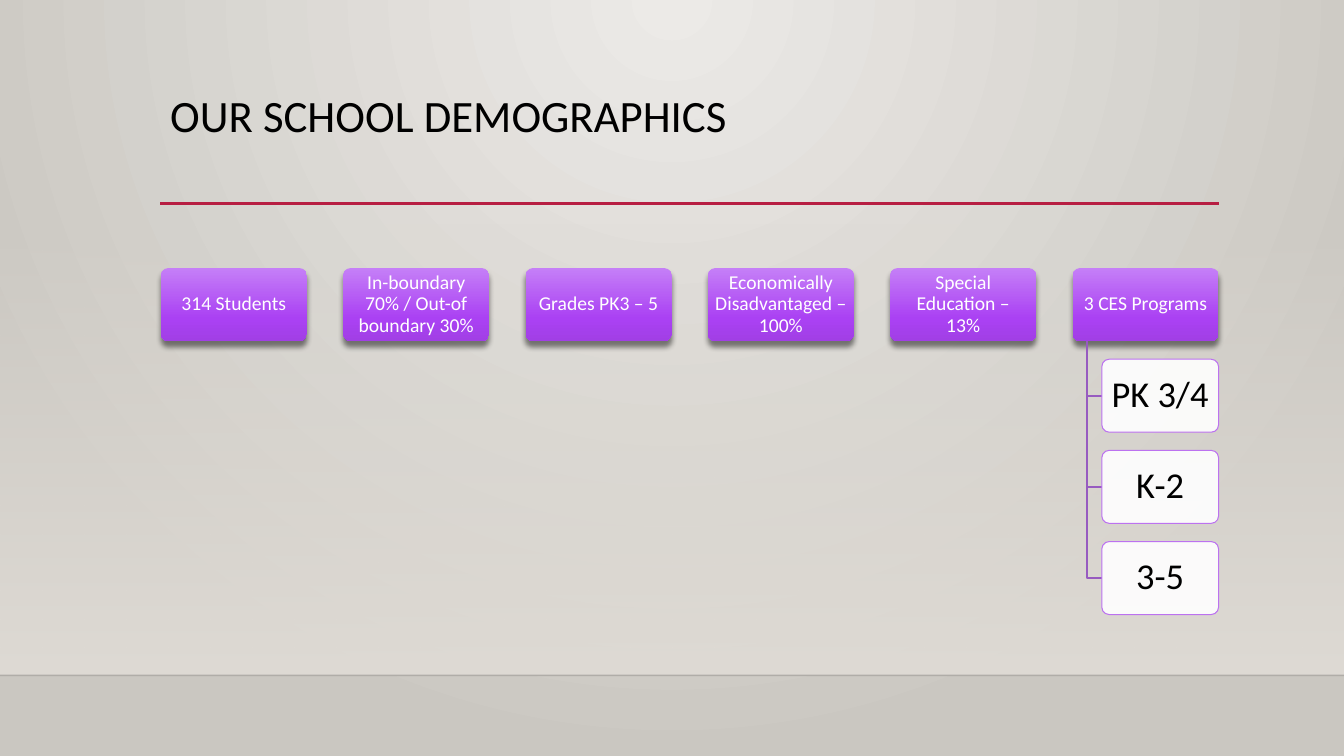
from lxml import etree
from pptx import Presentation
from pptx.dml.color import RGBColor
from pptx.enum.shapes import MSO_CONNECTOR, MSO_SHAPE
from pptx.enum.text import MSO_ANCHOR, PP_ALIGN
from pptx.oxml.ns import qn
from pptx.util import Pt

STRAIGHT = MSO_CONNECTOR.STRAIGHT
RECTANGLE, ROUNDED = MSO_SHAPE.RECTANGLE, MSO_SHAPE.ROUNDED_RECTANGLE
TOP, MIDDLE = MSO_ANCHOR.TOP, MSO_ANCHOR.MIDDLE
LEFT, CENTER = PP_ALIGN.LEFT, PP_ALIGN.CENTER

WIDTH, HEIGHT = 960, 540
FONT = "Calibri"
COLORS = {
    "glow": "ECEAE7", "edge": "CAC7C1", "haze": "DFDBD5", "black": "000000",
    "white": "FFFFFF", "rule": "B71E42", "card_light": "C57FF7",
    "card": "AA41F3", "card_dark": "A13FE5", "branch": "975BC0",
    "program_line": "BC72F0",
}
FACTS = [
    "314 Students", "In-boundary 70% / Out-of boundary 30%", "Grades PK3 – 5",
    "Economically Disadvantaged – 100%", "Special Education – 13%",
    "3 CES Programs",
]
PROGRAMS = ["PK 3/4", "K-2", "3-5"]


def color(name):
    """Return the named colour."""
    return RGBColor.from_string(COLORS[name])


def add_node(parent, tag, **attributes):
    """Append a drawing element with the given attributes."""
    node = etree.SubElement(parent, qn(tag))
    for name, value in attributes.items():
        node.set(name, str(value))
    return node


def set_alpha(color_node, percent):
    """Make a colour element partly opaque."""
    add_node(color_node, "a:alpha", val=percent * 1000)


def set_gradient(root, stops, circle=None):
    """Fill with (position, colour, opacity) stops, downward or from a focus."""
    gradient = root.find(".//" + qn("a:gradFill"))
    for child in list(gradient):
        gradient.remove(child)
    stop_list = add_node(gradient, "a:gsLst")
    for position, name, opacity in stops:
        stop = add_node(stop_list, "a:gs", pos=position * 1000)
        set_alpha(add_node(stop, "a:srgbClr", val=COLORS[name]), opacity)
    if circle:
        focus = add_node(gradient, "a:path", path="circle")
        add_node(focus, "a:fillToRect", **circle)
    else:
        add_node(gradient, "a:lin", ang=5400000, scaled=0)


def set_text(box, text, size, name, align=CENTER, anchor=MIDDLE, inset=(5, 3.6)):
    """Write one formatted paragraph into a box."""
    frame = box.text_frame
    frame.word_wrap = True
    frame.vertical_anchor = anchor
    frame.margin_left = frame.margin_right = Pt(inset[0])
    frame.margin_top = frame.margin_bottom = Pt(inset[1])
    para = frame.paragraphs[0]
    para.alignment = align
    para.line_spacing = 0.9
    span = para.add_run()
    span.text = text
    span.font.name = FONT
    span.font.size = Pt(size)
    span.font.color.rgb = color(name)


def add_box(page, kind, left, top, width, height):
    """Add a preset shape without shadow or outline."""
    box = page.shapes.add_shape(kind, Pt(left), Pt(top), Pt(width), Pt(height))
    box.line.fill.background()
    box.shadow.inherit = False
    if kind == ROUNDED:
        box.adjustments[0] = 0.1
    return box


def add_rule(page, left, right, top, name, weight, opacity=100):
    """Draw a horizontal line."""
    rule = page.shapes.add_connector(STRAIGHT, Pt(left), Pt(top), Pt(right), Pt(top))
    rule.line.color.rgb = color(name)
    rule.line.width = Pt(weight)
    properties = rule.element.spPr
    set_alpha(properties.find(".//" + qn("a:srgbClr")), opacity)
    add_node(properties, "a:effectLst")


def add_backdrop(page, width, height):
    """Paint the background, the haze band and the floor line."""
    page.background.fill.gradient()
    set_gradient(page.element, [(0, "glow", 100), (100, "edge", 100)],
                 circle={"l": 43000, "t": 0, "r": 43000, "b": 100000})
    floor = height - 57.6
    haze = add_box(page, RECTANGLE, 0, 159, width, floor - 159)
    haze.fill.gradient()
    set_gradient(haze.element, [(0, "haze", 0), (100, "haze", 100)])
    add_rule(page, 0, width, floor, "black", 1, opacity=20)


def add_heading(page, text, left, top, width, height):
    """Add the title with the red rule near its foot."""
    add_rule(page, left, left + width, top + height, "rule", 2.5)
    title = page.shapes.add_textbox(Pt(left), Pt(top), Pt(width), Pt(height))
    set_text(title, text, 32, "black", align=LEFT, anchor=TOP, inset=(7.2, 3.6))


def add_card(page, text, left, top, width, height):
    """Add a purple card with a soft shadow."""
    card = add_box(page, ROUNDED, left, top, width, height)
    card.fill.gradient()
    set_gradient(card.element, [(0, "card_light", 100), (69, "card", 100),
                                (100, "card_dark", 100)])
    effects = card.element.spPr.find(qn("a:effectLst"))
    shadow = add_node(effects, "a:outerShdw", blurRad=Pt(4), dist=Pt(4),
                      dir=5400000, rotWithShape=0)
    set_alpha(add_node(shadow, "a:srgbClr", val=COLORS["black"]), 48)
    set_text(card, text, 14, "white", inset=(3.6, 3))


def add_branch(page, trunk, start, end, level):
    """Draw an elbow from a card's foot to a program's side."""
    builder = page.shapes.build_freeform(Pt(trunk), Pt(start))
    builder.add_line_segments([(Pt(trunk), Pt(level)), (Pt(end), Pt(level))],
                              close=False)
    branch = builder.convert_to_shape()
    branch.fill.background()
    branch.line.color.rgb = color("branch")
    branch.line.width = Pt(1.25)
    branch.shadow.inherit = False


def add_programs(page, names, left, top, width, height):
    """Hang the programs below the card that has the given box."""
    child_left, child_width = left + 0.2 * width, 0.8 * width
    for index, name in enumerate(names, start=1):
        child_top = top + 1.25 * height * index
        add_branch(page, left + 0.1 * width, top + height, child_left,
                   child_top + height / 2)
        child = add_box(page, ROUNDED, child_left, child_top, child_width, height)
        child.fill.solid()
        child.fill.fore_color.rgb = color("white")
        set_alpha(child.element.spPr.find(".//" + qn("a:srgbClr")), 90)
        child.line.color.rgb = color("program_line")
        child.line.width = Pt(0.75)
        set_text(child, name, 26, "black")


def add_demographics(page, left, top, width):
    """Spread the fact cards over the width, with programs under the last."""
    card_width = width / (1.25 * len(FACTS) - 0.25)
    card_height = card_width / 2
    for index, fact in enumerate(FACTS):
        card_left = left + 1.25 * card_width * index
        add_card(page, fact, card_left, top, card_width, card_height)
    add_programs(page, PROGRAMS, card_left, top, card_width, card_height)


def main():
    """Build and save the slide."""
    deck = Presentation()
    deck.slide_width, deck.slide_height = Pt(WIDTH), Pt(HEIGHT)
    page = deck.slides.add_slide(deck.slide_layouts[6])
    add_backdrop(page, WIDTH, HEIGHT)
    add_heading(page, "OUR SCHOOL DEMOGRAPHICS", 114.5, 63.2, 756.5, 82)
    add_demographics(page, 115, 191.5, 755.4)
    deck.save("out.pptx")


if __name__ == "__main__":
    main()
